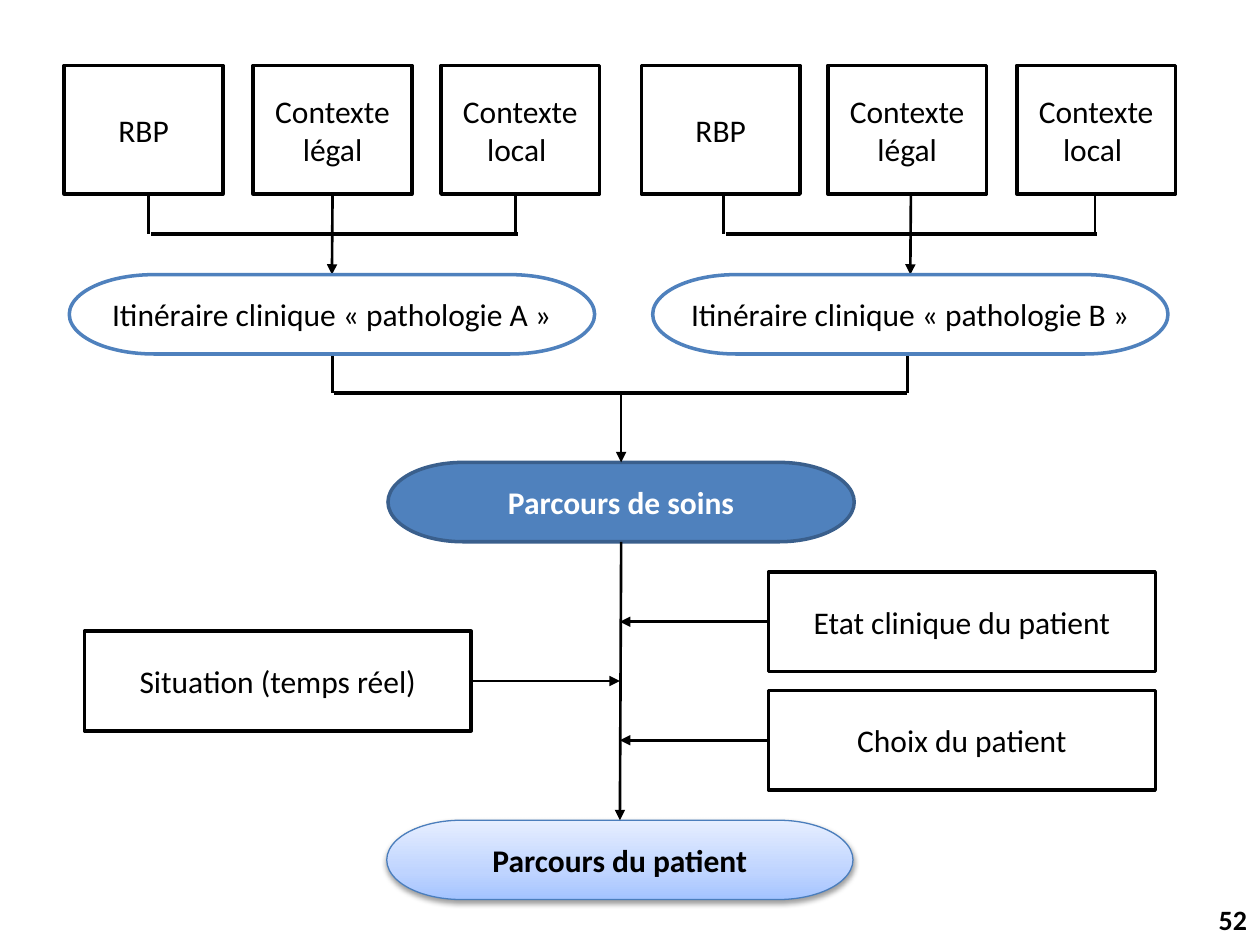
import copy
import dataclasses
import pptx
import pptx.util
import pptx.dml.color
import pptx.enum.shapes
import pptx.enum.text
import pptx.oxml
import pptx.oxml.ns
import pptx.oxml.xmlchemy

Inches = pptx.util.Inches
Pt = pptx.util.Pt
Shape = pptx.enum.shapes.MSO_SHAPE
qn = pptx.oxml.ns.qn
make = pptx.oxml.xmlchemy.OxmlElement


@dataclasses.dataclass(frozen=True)
class Theme:
    font: str = "Calibri"
    black: str = "000000"
    white: str = "FFFFFF"
    blue: str = "4F81BD"
    navy: str = "3A5F8C"
    edge: str = "4B7EBC"
    fade: tuple = ((0, "A4C4FF"), (0.35, "BFD4FF"), (1, "E6EEFF"))
    body: int = 18
    page: int = 16
    thin: float = 1.5
    box: float = 2
    bar: float = 2.25


THEME = Theme()


def rgb(code):
    return pptx.dml.color.RGBColor.from_string(code)


def add_node(slide, kind, spot, text, fill=THEME.white, line=THEME.black,
             ink=THEME.black, size=THEME.body, bold=False):
    node = slide.shapes.add_shape(kind, *map(Inches, spot))
    node.shadow.inherit = False
    node.fill.solid()
    node.fill.fore_color.rgb = rgb(fill)
    if line:
        node.line.color.rgb = rgb(line)
        node.line.width = Pt(THEME.box)
    else:
        node.line.fill.background()
    frame = node.text_frame
    frame.word_wrap = True
    frame.vertical_anchor = pptx.enum.text.MSO_ANCHOR.MIDDLE
    frame.text = text
    para = frame.paragraphs[0]
    para.alignment = pptx.enum.text.PP_ALIGN.CENTER
    font = para.runs[0].font
    font.name, font.size, font.bold = THEME.font, Pt(size), bold
    font.color.rgb = rgb(ink)
    return node


def add_box(slide, spot, text):
    return add_node(slide, Shape.RECTANGLE, spot, text)


def add_pill(slide, spot, text, **style):
    return add_node(slide, Shape.FLOWCHART_TERMINATOR, spot, text, **style)


def add_line(slide, x1, y1, x2, y2, width=THEME.thin, arrow=False):
    line = slide.shapes.add_connector(
        pptx.enum.shapes.MSO_CONNECTOR.STRAIGHT,
        *map(Inches, (x1, y1, x2, y2)))
    line.line.color.rgb = rgb(THEME.black)
    line.line.width = Pt(width)
    props = line._element.spPr
    if arrow:
        tail = make("a:tailEnd")
        tail.set("type", "triangle")
        props.find(qn("a:ln")).append(tail)
    props.append(make("a:effectLst"))
    return line


def add_glow(node):
    node.line.color.rgb = rgb(THEME.edge)
    node.line.width = Pt(0.75)
    node.fill.gradient()
    node.fill.gradient_angle = 90
    props = node._element.spPr
    stops = props.find(".//" + qn("a:gsLst"))
    stops.append(copy.deepcopy(stops[0]))
    for stop, (place, code) in zip(node.fill.gradient_stops, THEME.fade):
        stop.position = place
        stop.color.rgb = rgb(code)
    shade = pptx.oxml.parse_xml(
        f'<a:outerShdw {pptx.oxml.ns.nsdecls("a")} blurRad="40000" '
        'dist="20000" dir="5400000" rotWithShape="0">'
        f'<a:srgbClr val="{THEME.black}"><a:alpha val="38000"/></a:srgbClr>'
        '</a:outerShdw>')
    props.find(qn("a:effectLst")).append(shade)


def add_group(slide, lefts, stubs, stem, exit_x, spot, name):
    add_line(slide, exit_x, 2.57, exit_x, 3.12)
    for x in stubs:
        add_line(slide, x, 1.31, x, 1.86)
    arrow = add_line(slide, stem, 1.47, stem, 2.18, arrow=True)
    first, last = stubs
    add_line(slide, first + 0.02, 1.86, last + 0.02, 1.86, THEME.bar)
    pill = add_pill(slide, spot, f"Itinéraire clinique « pathologie {name} »",
                    line=THEME.blue)
    arrow.end_connect(pill, 0)
    for x, text in zip(lefts, ("RBP", "Contexte légal", "Contexte local ")):
        add_box(slide, (x, 0.52, 1.26, 1.02), text)


def add_factor(slide, left, top, text, side, axis):
    box = add_box(slide, (left, top, 3.07, 0.79), text)
    mid = top + 0.79 / 2
    arrow = add_line(slide, left, mid, axis, mid, arrow=True)
    arrow.begin_connect(box, side)


def main():
    deck = pptx.Presentation()
    deck.slide_width, deck.slide_height = Inches(10), Inches(7.5)
    slide = deck.slides.add_slide(deck.slide_layouts[6])

    add_group(slide, (0.51, 2.01, 3.5), (1.18, 4.09), 2.64, 2.64,
              (0.55, 2.18, 4.17, 0.63), "A")
    add_group(slide, (5.09, 6.57, 8.07), (5.74, 8.69), 7.23, 7.2,
              (5.18, 2.18, 4.09, 0.63), "B")

    add_line(slide, 2.65, 3.12, 7.2, 3.12, THEME.bar)
    care = add_pill(slide, (3.08, 3.67, 3.7, 0.63), "Parcours de soins",
                    fill=THEME.blue, line=THEME.navy, ink=THEME.white, bold=True)
    drop = add_line(slide, 4.93, 3.12, 4.93, 3.67, arrow=True)
    drop.end_connect(care, 0)

    axis = 4.92
    path = add_pill(slide, (3.07, 6.51, 3.7, 0.63), "Parcours du patient", bold=True)
    add_glow(path)
    trunk = add_line(slide, axis, 4.3, axis, 6.51, arrow=True)
    trunk.begin_connect(care, 2)
    trunk.end_connect(path, 0)

    for left, top, text, side in (
            (0.67, 5.01, "Situation (temps réel)", 3),
            (6.1, 5.48, "Choix du patient", 1),
            (6.1, 4.54, "Etat clinique du patient", 1)):
        add_factor(slide, left, top, text, side, axis)

    page = add_node(slide, Shape.RECTANGLE, (9.57, 7.1, 0.43, 0.4), "52",
                    line=None, size=THEME.page, bold=True)
    page.text_frame.margin_left = page.text_frame.margin_right = 0

    deck.save("out.pptx")


if __name__ == "__main__":
    main()
